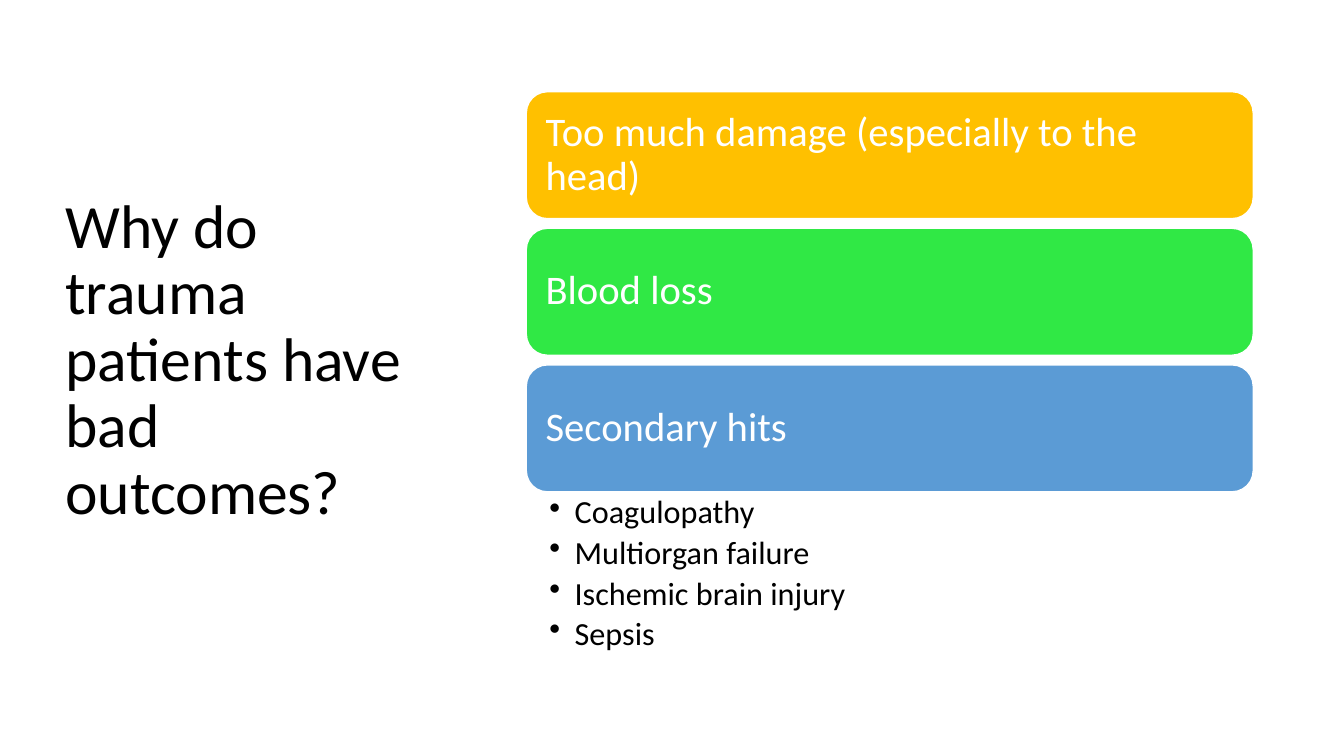
import lxml.etree
import pptx
import pptx.dml.color
import pptx.enum.shapes
import pptx.enum.text
import pptx.oxml.ns
import pptx.util

COLORS = {
    "text": "000000",
    "white": "FFFFFF",
    "damage": "FFC000",
    "blood": "30E845",
    "secondary": "5B9BD5",
}


class SlideBuilder:
    """Draws styled elements on one slide, placed in percent of its size."""

    font = "Calibri"
    line_spacing = 0.9

    def __init__(self, deck):
        self.deck = deck
        self.slide = deck.slides.add_slide(deck.slide_layouts[6])

    def place(self, left, top, width, height):
        across, down = self.deck.slide_width / 100, self.deck.slide_height / 100
        return (round(left * across), round(top * down),
                round(width * across), round(height * down))

    def color(self, name):
        return pptx.dml.color.RGBColor.from_string(COLORS[name])

    def set_frame(self, shape, anchor, side, edge):
        frame = shape.text_frame
        frame.word_wrap = True
        frame.vertical_anchor = anchor
        frame.margin_left = frame.margin_right = pptx.util.Inches(side)
        frame.margin_top = frame.margin_bottom = pptx.util.Inches(edge)
        return frame

    def set_text(self, paragraph, words, size, color):
        paragraph.text = words
        paragraph.alignment = pptx.enum.text.PP_ALIGN.LEFT
        paragraph.line_spacing = self.line_spacing
        paragraph.font.name = self.font
        paragraph.font.size = pptx.util.Pt(size)
        paragraph.font.color.rgb = self.color(color)

    def title(self, words, *area):
        heading = self.slide.shapes.add_textbox(*self.place(*area))
        frame = self.set_frame(heading, pptx.enum.text.MSO_ANCHOR.MIDDLE, 0.1, 0.05)
        self.set_text(frame.paragraphs[0], words, 44, "text")

    def bar(self, words, fill, *area):
        cause = self.slide.shapes.add_shape(
            pptx.enum.shapes.MSO_SHAPE.ROUNDED_RECTANGLE, *self.place(*area))
        cause.shadow.inherit = False
        cause.fill.solid()
        cause.fill.fore_color.rgb = self.color(fill)
        cause.line.color.rgb = self.color("white")
        cause.line.width = pptx.util.Pt(1)
        frame = self.set_frame(cause, pptx.enum.text.MSO_ANCHOR.MIDDLE, 0.13, 0.12)
        self.set_text(frame.paragraphs[0], words, 29, "white")

    def bullets(self, items, *area):
        hits = self.slide.shapes.add_textbox(*self.place(*area))
        frame = self.set_frame(hits, pptx.enum.text.MSO_ANCHOR.TOP, 0.23, 0.04)
        indent = pptx.util.Inches(0.25)
        for index, item in enumerate(items):
            paragraph = frame.add_paragraph() if index else frame.paragraphs[0]
            paragraph.level = 1
            paragraph.space_after = pptx.util.Pt(4.2)
            properties = paragraph._p.get_or_add_pPr()
            properties.set("marL", str(indent))
            properties.set("indent", str(-indent))
            lxml.etree.SubElement(
                properties, pptx.oxml.ns.qn("a:buChar"), char="•")
            self.set_text(paragraph, item, 23, "text")


def main():
    deck = pptx.Presentation()
    deck.slide_width = pptx.util.Inches(13.33)
    deck.slide_height = pptx.util.Inches(7.5)
    builder = SlideBuilder(deck)

    builder.title("Why do trauma patients have bad outcomes?",
                  4.13, 9.87, 29.63, 75.87)

    left, top, width, height, pitch = 39.16, 12.13, 54.09, 16.8, 18.07
    causes = [
        ("Too much damage (especially to the head)", "damage"),
        ("Blood loss", "blood"),
        ("Secondary hits", "secondary"),
    ]
    for row, (cause, fill) in enumerate(causes):
        builder.bar(cause, fill, left, top + row * pitch, width, height)

    hits_top = top + (len(causes) - 1) * pitch + height
    builder.bullets(
        ["Coagulopathy", "Multiorgan failure", "Ischemic brain injury", "Sepsis"],
        left, hits_top, width, 23.2)

    deck.save("out.pptx")


if __name__ == "__main__":
    main()
